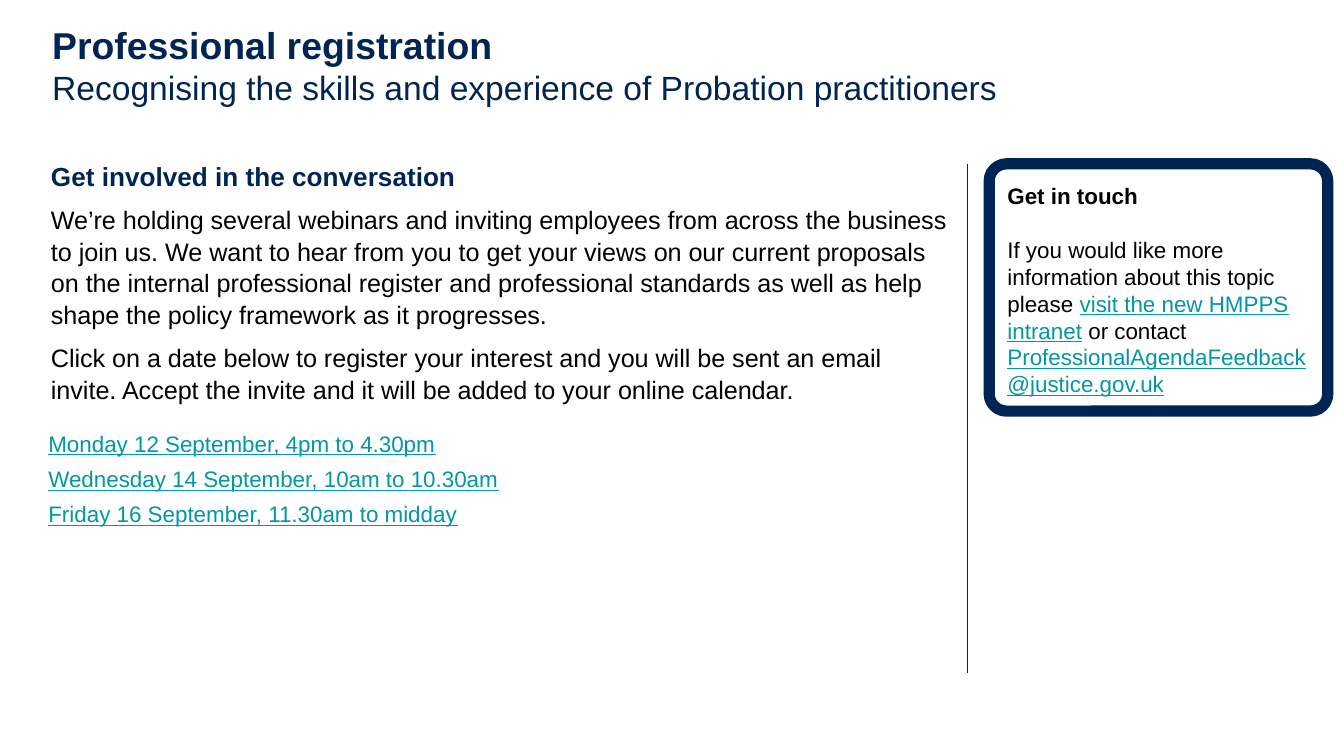
"""Build the slide that invites staff to the professional registration webinars."""
from lxml.etree import SubElement
from pptx import Presentation
from pptx.dml.color import RGBColor
from pptx.enum.shapes import MSO_CONNECTOR, MSO_SHAPE
from pptx.enum.text import MSO_ANCHOR, PP_ALIGN
from pptx.oxml.ns import qn
from pptx.util import Pt

COLOURS = {"navy": "002554", "black": "000000", "teal": "0097A7"}


def colour(name):
    return RGBColor.from_string(COLOURS[name])


def add_span(para, text, size=12, ink="black", bold=False, underline=False, new_line=False):
    if new_line:
        para.add_line_break()
    span = para.add_run()
    span.text = text
    span.font.name = "Arial"
    span.font.size = Pt(size)
    span.font.bold = bold
    span.font.underline = underline
    span.font.color.rgb = colour(ink)


class SlideBuilder:
    def __init__(self, deck):
        self.page = deck.slides.add_slide(deck.slide_layouts[6])
        self.link = {"ink": "teal", "underline": True}
        self.heading = {"ink": "navy", "bold": True}

    def fill_frame(self, frame, paragraphs, margins, anchor=MSO_ANCHOR.TOP):
        frame.word_wrap = True
        frame.vertical_anchor = anchor
        frame.margin_left = frame.margin_right = Pt(margins[0])
        frame.margin_top = frame.margin_bottom = Pt(margins[1])
        for index, (spans, after, spacing) in enumerate(paragraphs):
            para = frame.add_paragraph() if index else frame.paragraphs[0]
            para.alignment = PP_ALIGN.LEFT
            para.space_after = Pt(after)
            para.line_spacing = spacing
            for text, style in spans:
                add_span(para, text, **style)

    def text_box(self, bounds, paragraphs, margins=(7.2, 3.6), anchor=MSO_ANCHOR.TOP):
        box = self.page.shapes.add_textbox(*map(Pt, bounds))
        self.fill_frame(box.text_frame, paragraphs, margins, anchor)

    def panel(self, bounds, paragraphs, rounding, border):
        box = self.page.shapes.add_shape(MSO_SHAPE.ROUNDED_RECTANGLE, *map(Pt, bounds))
        box.adjustments[0] = rounding
        box.shadow.inherit = False
        box.fill.background()
        box.line.color.rgb = colour("navy")
        box.line.width = Pt(border)
        self.fill_frame(box.text_frame, paragraphs, (7.2, 7.2))

    def divider(self, x, top, bottom):
        line = self.page.shapes.add_connector(MSO_CONNECTOR.STRAIGHT, Pt(x), Pt(top), Pt(x), Pt(bottom))
        line.line.color.rgb = colour("navy")
        line.line.width = Pt(0.75)
        SubElement(line._element.spPr, qn("a:effectLst"))


def main():
    deck = Presentation()
    deck.slide_width, deck.slide_height = Pt(720), Pt(405)
    builder = SlideBuilder(deck)
    link, heading = builder.link, builder.heading
    body = {"size": 13.5}

    title = [
        ("Professional registration", {**heading, "size": 20}),
        ("Recognising the skills and experience of Probation practitioners",
         {"size": 18, "ink": "navy", "new_line": True}),
    ]
    builder.text_box((20.9, 2.9, 667.4, 63.4), [(title, 0, 1.0)], (7.2, 7.2), MSO_ANCHOR.MIDDLE)

    builder.text_box((20.2, 81.4, 497.5, 139), [
        ([("Get involved in the conversation", {**heading, "size": 14})], 6, 1.05),
        ([("We’re holding several webinars and inviting employees from across the business to join us. "
           "We want to hear from you to get your views on our current proposals on the internal "
           "professional register and professional standards as well as help shape the policy "
           "framework as it progresses.", body)], 6, 1.05),
        ([("Click on a date below to register your interest and you will be sent an email invite. "
           "Accept the invite and it will be added to your online calendar.", body)], 0, 1.05),
    ])

    dates = (
        "Monday 12 September, 4pm to 4.30pm",
        "Wednesday 14 September, 10am to 10.30am",
        "Friday 16 September, 11.30am to midday",
    )
    builder.text_box((25.9, 230.4, 243.4, 120.2), [([(date, link)], 4.5, 1.0) for date in dates], (0, 0))

    contact = [
        ("If you would like more information about this topic please ", {}),
        ("visit the new HMPPS intranet", link),
        (" or contact ", {}),
        ("ProfessionalAgendaFeedback@justice.gov.uk", link),
    ]
    builder.panel((529.9, 87.8, 181.4, 132.5),
                  [([("Get in touch", {"bold": True})], 14.4, 1.0), (contact, 0, 1.0)],
                  rounding=0.07, border=6)
    builder.divider(518.4, 87.8, 360.7)

    deck.save("out.pptx")


if __name__ == "__main__":
    main()
